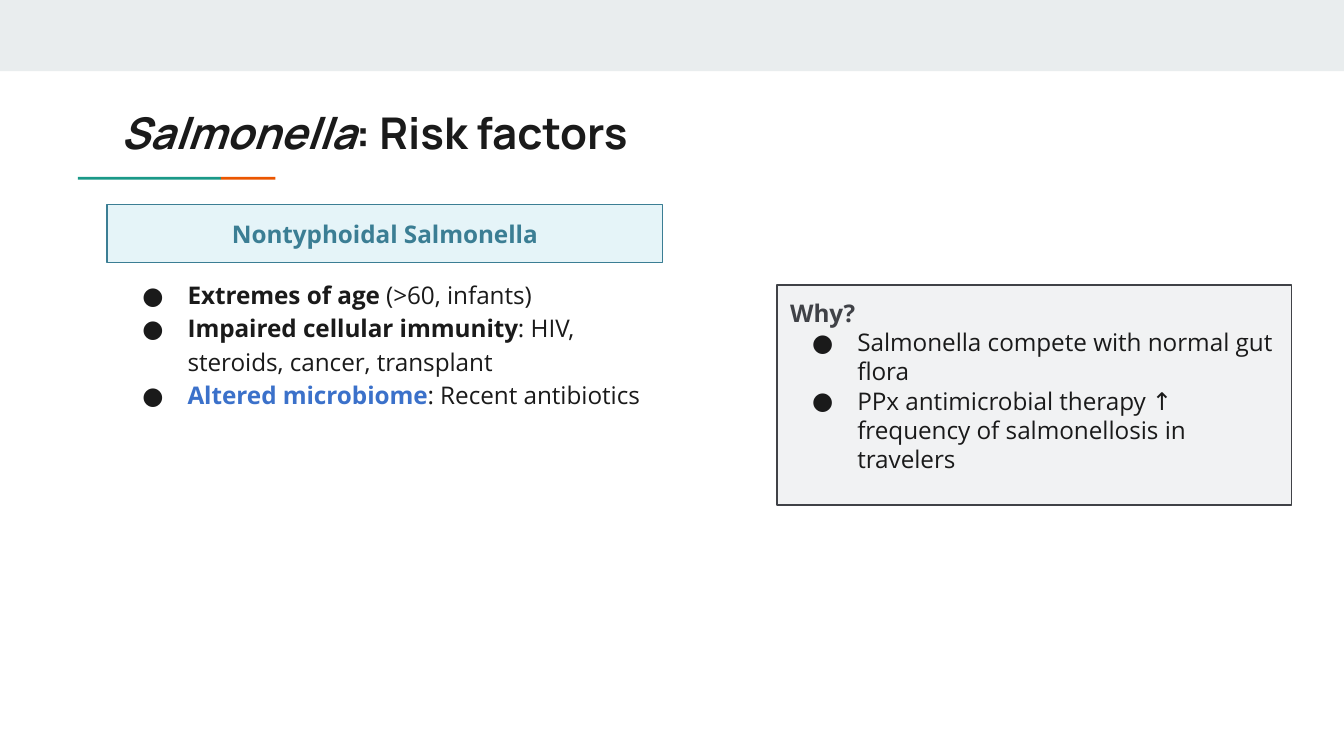
from pptx import Presentation
from pptx.dml.color import RGBColor as Rgb
from pptx.enum.shapes import MSO_SHAPE as Shape
from pptx.enum.text import MSO_ANCHOR as Anchor, PP_ALIGN as Align
from pptx.oxml.ns import qn
from pptx.util import Pt
from lxml.etree import SubElement

COLORS = {
    "band": "E9EDEE", "teal": "1A9988", "orange": "EB5600", "ink": "1A1A1A",
    "heading": "3B7E94", "heading_fill": "E5F4F8", "highlight": "3B71CA",
    "why": "404247", "why_fill": "F1F2F3",
}

deck = Presentation()
deck.slide_width, deck.slide_height = Pt(720), Pt(405)
page = deck.slides.add_slide(deck.slide_layouts[6])


def add_rect(left, top, width, height, fill, line=None):
    box = page.shapes.add_shape(Shape.RECTANGLE, Pt(left), Pt(top), Pt(width), Pt(height))
    box.shadow.inherit = False
    box.fill.solid()
    box.fill.fore_color.rgb = Rgb.from_string(COLORS[fill])
    if line:
        box.line.color.rgb = Rgb.from_string(COLORS[line])
        box.line.width = Pt(0.75)
    else:
        box.line.fill.background()
    return box


def write(box, paragraphs, *, size=13, font="Open Sans", anchor=Anchor.TOP,
          align=Align.LEFT, spacing=1.0, bullets_from=None):
    """Each paragraph is a list of (text, color, bold, italic) spans."""
    frame = box.text_frame
    frame.word_wrap = True
    frame.vertical_anchor = anchor
    frame.margin_left = frame.margin_right = Pt(7.2)
    frame.margin_top = frame.margin_bottom = Pt(7.2)
    for index, spans in enumerate(paragraphs):
        para = frame.paragraphs[0] if index == 0 else frame.add_paragraph()
        para.alignment = align
        para.line_spacing = spacing
        if bullets_from is not None and index >= bullets_from:
            props = para._p.get_or_add_pPr()
            props.set("marL", str(Pt(36)))
            props.set("indent", str(Pt(-24.25)))
            bullet_color = SubElement(props, qn("a:buClr"))
            SubElement(bullet_color, qn("a:srgbClr"), val=COLORS["ink"])
            SubElement(props, qn("a:buFont"), typeface=font)
            SubElement(props, qn("a:buChar"), char="●")
        for text, color, bold, italic in spans:
            span = para.add_run()
            span.text = text
            span.font.name = font
            span.font.size = Pt(size)
            span.font.bold = bold
            span.font.italic = italic
            span.font.color.rgb = Rgb.from_string(COLORS[color])


# Top band and two-colour rule under the title
add_rect(0, 0, 720, 38.2, "band")
add_rect(41.8, 94.8, 76.6, 1.5, "teal")
add_rect(118.4, 94.8, 29.2, 1.5, "orange")

# Title
title = page.shapes.add_textbox(Pt(57.6), Pt(49.7), Pt(605.5), Pt(42.5))
write(title, [[("Salmonella", "ink", True, True), (": Risk factors", "ink", True, False)]],
      size=23.4, font="Manrope")

# Risk factors
heading = add_rect(57.4, 109.6, 297.4, 31, "heading_fill", "heading")
write(heading, [[("Nontyphoidal Salmonella", "heading", True, False)]],
      anchor=Anchor.MIDDLE, align=Align.CENTER)

factors = [
    ("Extremes of age", "ink", " (>60, infants)"),
    ("Impaired cellular immunity", "ink", ": HIV, steroids, cancer, transplant"),
    ("Altered microbiome", "highlight", ": Recent antibiotics"),
]
body = page.shapes.add_textbox(Pt(57.4), Pt(140.6), Pt(297.4), Pt(186.5))
write(body, [[(name, color, True, False), (detail, "ink", False, False)]
             for name, color, detail in factors],
      spacing=1.15, bullets_from=0)

# Explanation
why = add_rect(416.2, 152.6, 275.8, 118, "why_fill", "why")
write(why, [
    [("Why?", "why", True, False)],
    [("Salmonella compete with normal gut flora", "ink", False, False)],
    [("PPx antimicrobial therapy ↑ frequency of salmonellosis in travelers", "ink", False, False)],
], bullets_from=1)

deck.save("out.pptx")
